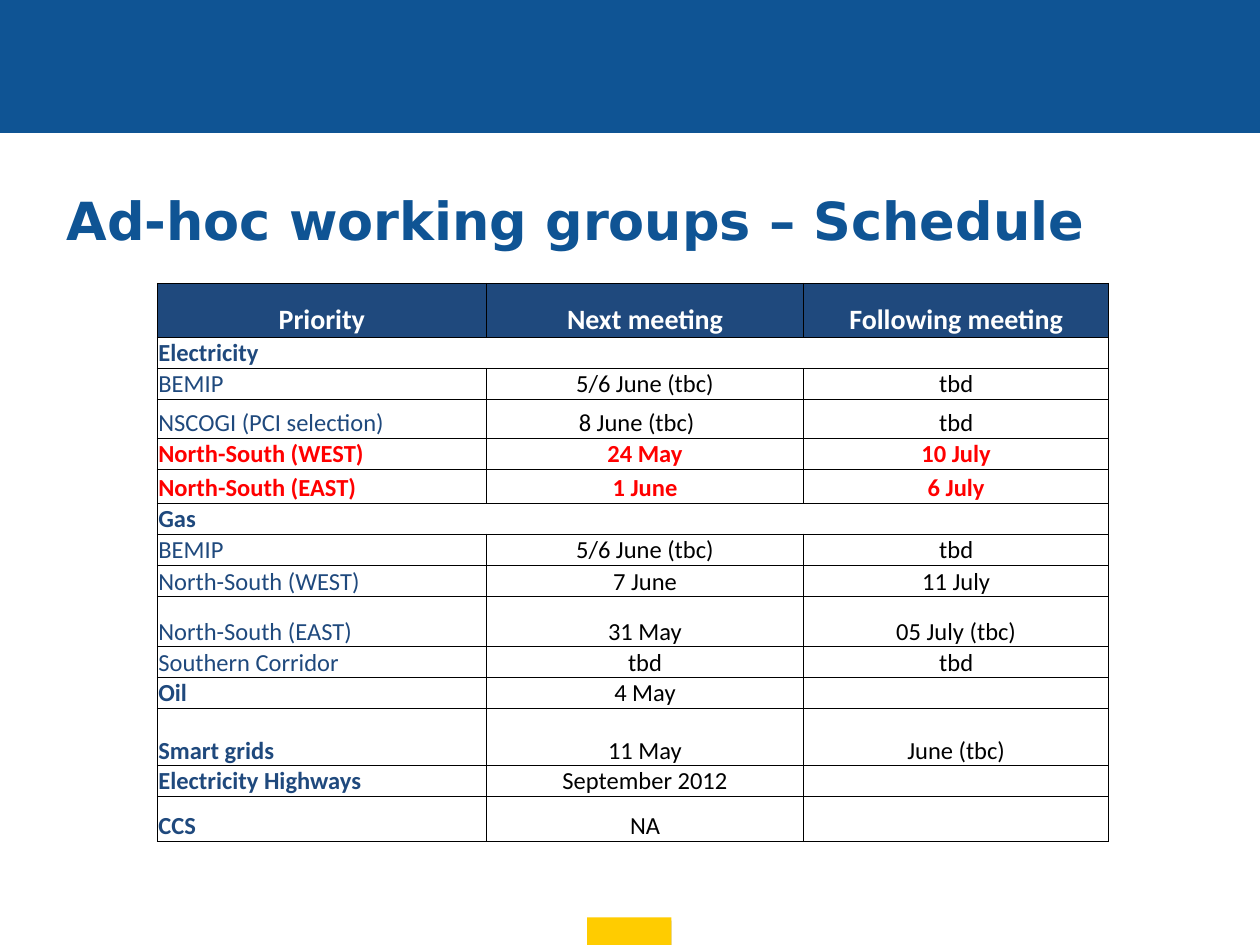
from lxml import etree
from pptx import Presentation
from pptx.dml.color import RGBColor
from pptx.enum import shapes, text
from pptx.oxml.ns import qn
from pptx.util import Pt

BLUE, NAVY, RED = "0F5494", "1F497D", "FF0000"
BLACK, WHITE, YELLOW = "000000", "FFFFFF", "FFCC00"
SIZE = 14

# Row height, kind, cell texts
SCHEDULE = [
    (30.8, "header", ["Priority", "Next meeting", "Following meeting"]),
    (17.7, "section", ["Electricity"]),
    (17.7, "plain", ["BEMIP", "5/6 June (tbc)", "tbd"]),
    (22.3, "plain", ["NSCOGI (PCI selection)", "8 June (tbc)", "tbd"]),
    (17.7, "urgent", ["North-South (WEST)", "24 May", "10 July"]),
    (19.4, "urgent", ["North-South (EAST)", "1 June", "6 July"]),
    (17.7, "section", ["Gas"]),
    (17.7, "plain", ["BEMIP", "5/6 June (tbc)", "tbd"]),
    (18, "plain", ["North-South (WEST)", "7 June", "11 July"]),
    (28.6, "plain", ["North-South (EAST)", "31 May", "05 July (tbc)"]),
    (17.7, "plain", ["Southern Corridor", "tbd", "tbd"]),
    (17.7, "group", ["Oil", "4 May", ""]),
    (32.6, "group", ["Smart grids", "11 May", "June (tbc)"]),
    (17.7, "group", ["Electricity Highways", "September 2012", ""]),
    (25.7, "group", ["CCS", "NA", ""]),
]


def rgb(value):
    return RGBColor.from_string(value)


def add_run(p, words, size, font, color, bold):
    r = p.add_run()
    r.text = words
    r.font.size, r.font.name, r.font.bold = Pt(size), font, bold
    r.font.color.rgb = rgb(color)


def add_block(s, x, y, w, h, color, outlined=False):
    sp = s.shapes.add_shape(shapes.MSO_SHAPE.RECTANGLE, Pt(x), Pt(y), Pt(w), Pt(h))
    sp.shadow.inherit = False
    sp.fill.solid()
    sp.fill.fore_color.rgb = rgb(color)
    if outlined:
        sp.line.color.rgb = rgb(color)
        sp.line.width = Pt(0.75)
    else:
        sp.line.fill.background()
    return sp


def add_shadow(sp, distance, opacity):
    effects = sp._element.spPr.find(qn("a:effectLst"))
    shadow = etree.SubElement(effects, qn("a:outerShdw"), blurRad="0",
                              dist=str(Pt(distance)), dir="5400000", rotWithShape="0")
    color = etree.SubElement(shadow, qn("a:srgbClr"), val=BLACK)
    etree.SubElement(color, qn("a:alpha"), val=str(opacity * 1000))


def add_title(s, x, y, w, h):
    tf = s.shapes.add_textbox(Pt(x), Pt(y), Pt(w), Pt(h)).text_frame
    tf.word_wrap = True
    tf.vertical_anchor = text.MSO_ANCHOR.MIDDLE
    add_run(tf.paragraphs[0], "Ad-hoc working groups – Schedule", 30,
            "DejaVu Sans", BLUE, True)


def set_borders(cell, widths):
    tcPr = cell._tc.get_or_add_tcPr()
    for i, (side, width) in enumerate(zip(("lnL", "lnR", "lnT", "lnB"), widths)):
        ln = etree.Element(qn("a:" + side), w=str(Pt(width)))
        fill = etree.SubElement(ln, qn("a:solidFill"))
        etree.SubElement(fill, qn("a:srgbClr"), val=BLACK)
        tcPr.insert(i, ln)


def fill_cell(cell, words, kind, first):
    header = kind == "header"
    cell.vertical_anchor = text.MSO_ANCHOR.BOTTOM
    cell.margin_left = cell.margin_right = cell.margin_top = Pt(0.5)
    cell.margin_bottom = Pt(0)
    if header:
        cell.fill.solid()
        cell.fill.fore_color.rgb = rgb(NAVY)
    else:
        cell.fill.background()
    p = cell.text_frame.paragraphs[0]
    p.alignment = text.PP_ALIGN.CENTER if header or not first else text.PP_ALIGN.LEFT
    if not words:
        etree.SubElement(p._p, qn("a:endParaRPr"), sz=str(SIZE * 100))
        return
    color = {"header": WHITE, "urgent": RED}.get(kind, NAVY if first else BLACK)
    bold = kind in ("header", "urgent") or (first and kind != "plain")
    add_run(p, words, 16 if header else SIZE, "Calibri", color, bold)


def add_schedule(s, x, y, w, h):
    columns = (187.9, 181.4, w - 187.9 - 181.4)
    last_row, last_col = len(SCHEDULE) - 1, len(columns) - 1
    tbl = s.shapes.add_table(last_row + 1, last_col + 1, Pt(x), Pt(y), Pt(w), Pt(h)).table
    tbl.first_row = tbl.horz_banding = False
    for column, width in zip(tbl.columns, columns):
        column.width = Pt(width)
    for i, (height, kind, words) in enumerate(SCHEDULE):
        tbl.rows[i].height = Pt(height)
        if kind == "section":
            tbl.cell(i, 0).merge(tbl.cell(i, last_col))
        for j in range(last_col + 1):
            cell = tbl.cell(i, j)
            fill_cell(cell, words[j] if j < len(words) else "", kind, j == 0)
            header = kind == "header"
            heavy = (header or j == 0, header or j == last_col,
                     i <= 1, header or i == last_row)
            set_borders(cell, [1 if edge else 0.5 for edge in heavy])
    # The tentative June date sits left of centre
    tbl.cell(3, 1).margin_right = Pt(10)


def main():
    prs = Presentation()
    prs.slide_width, prs.slide_height = Pt(720), Pt(540)
    s = prs.slides.add_slide(prs.slide_layouts[6])
    # Top banner and footer tab
    add_block(s, 0, 0, 720, 75.6, BLUE, outlined=True)
    add_shadow(add_block(s, 335.5, 524.2, 48.2, 15.8, YELLOW), 1.8, 35)
    # Title and schedule
    add_title(s, 31, 88.6, 648, 73.4)
    add_schedule(s, 90, 162, 543.6, 318)
    prs.save("out.pptx")


if __name__ == "__main__":
    main()
